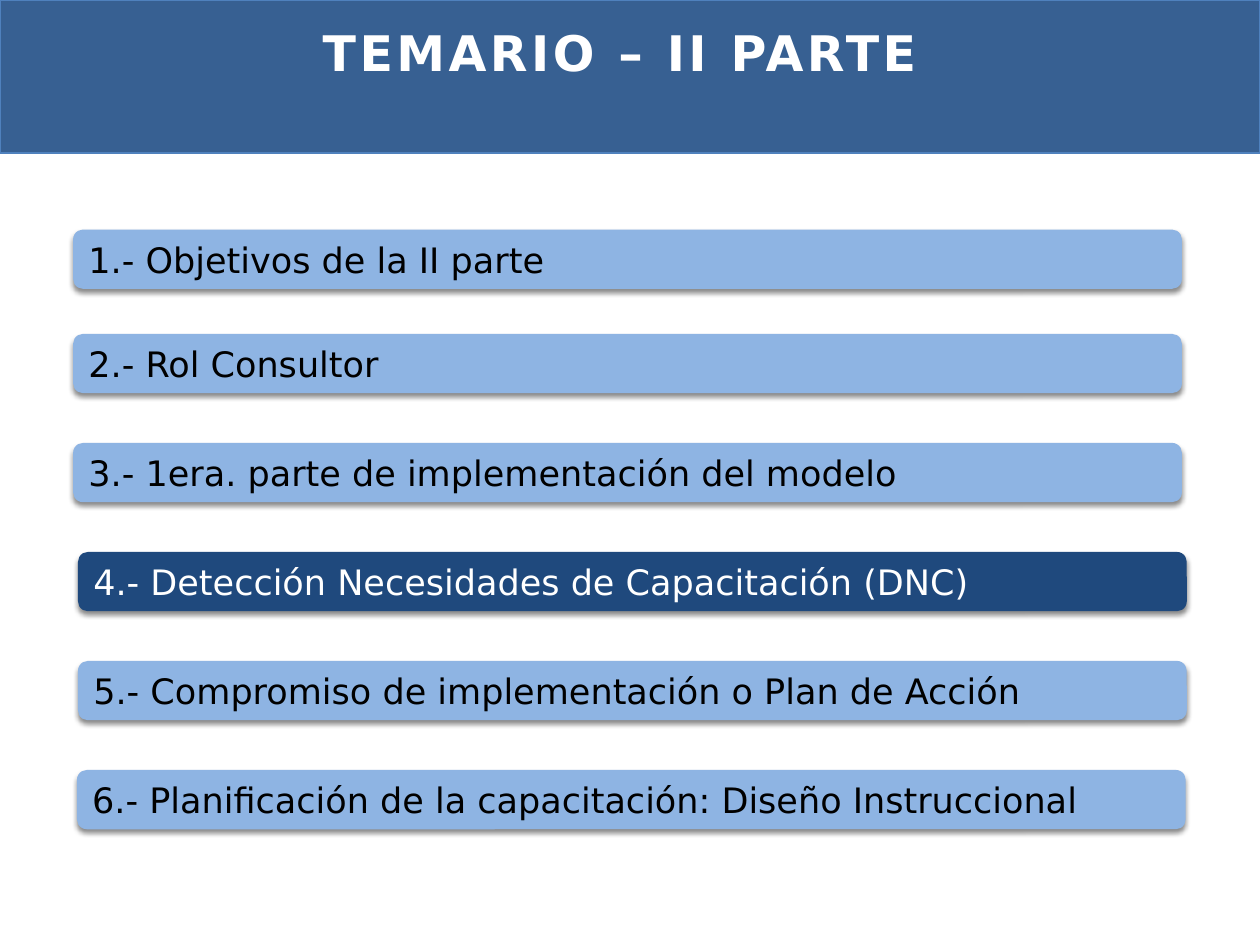
from lxml.etree import SubElement
from pptx import Presentation
from pptx.dml.color import RGBColor
from pptx.enum.shapes import MSO_SHAPE
from pptx.enum.text import MSO_ANCHOR, PP_ALIGN
from pptx.oxml.ns import qn
from pptx.util import Pt

# Content: text and left edge of each topic bar
TITLE = "TEMARIO – II PARTE"
TOPICS = [
    ("1.- Objetivos de la II parte", 41.8),
    ("2.- Rol Consultor", 41.8),
    ("3.- 1era. parte de implementación del modelo", 41.8),
    ("4.- Detección Necesidades de Capacitación (DNC)", 44.6),
    ("5.- Compromiso de implementación o Plan de Acción", 44.6),
    ("6.- Planificación de la capacitación: Diseño Instruccional", 44),
]
CURRENT = 3

FONT = "DejaVu Sans"
WHITE = RGBColor(0xFF, 0xFF, 0xFF)
BLACK = RGBColor(0x00, 0x00, 0x00)
BANNER_FILL = RGBColor(0x37, 0x60, 0x92)
BANNER_LINE = RGBColor(0x4F, 0x81, 0xBD)
LIGHT_BLUE = RGBColor(0x8E, 0xB4, 0xE3)
DARK_BLUE = RGBColor(0x1F, 0x49, 0x7D)

BAR_WIDTH, BAR_HEIGHT = 633.6, 33.9
FIRST_TOP, SECOND_TOP, PITCH = 131.2, 190.8, 62.3


def add_block(page, kind, left, top, width, height, fill):
    block = page.shapes.add_shape(kind, Pt(left), Pt(top), Pt(width), Pt(height))
    block.fill.solid()
    block.fill.fore_color.rgb = fill
    block.line.fill.background()
    block.shadow.inherit = False
    return block


def write(shape, text, size, color, align, anchor):
    frame = shape.text_frame
    frame.word_wrap = True
    frame.vertical_anchor = anchor
    para = frame.paragraphs[0]
    para.text = text
    para.alignment = align
    para.font.name = FONT
    para.font.size = Pt(size)
    para.font.color.rgb = color
    return para


def add_soft_shadow(shape):
    effects = shape.element.spPr.find(qn("a:effectLst"))
    shadow = SubElement(effects, qn("a:outerShdw"), blurRad=str(Pt(3)),
                        dist=str(Pt(2)), dir="5400000", rotWithShape="0")
    color = SubElement(shadow, qn("a:srgbClr"), val=str(BLACK))
    SubElement(color, qn("a:alpha"), val="45000")


deck = Presentation()
deck.slide_width, deck.slide_height = Pt(720), Pt(540)
page = deck.slides.add_slide(deck.slide_layouts[6])

# Banner and title
banner = add_block(page, MSO_SHAPE.RECTANGLE, 0, 0, 720, 87.4, BANNER_FILL)
banner.line.color.rgb = BANNER_LINE
banner.line.width = Pt(1.5)
title = page.shapes.add_textbox(Pt(36.7), Pt(9.4), Pt(635), Pt(90))
para = write(title, TITLE, 28, WHITE, PP_ALIGN.CENTER, MSO_ANCHOR.TOP)
para.font.bold = True
para.runs[0].font._element.set("spc", "200")

# Topic bars, the current one in dark blue
for index, (topic, left) in enumerate(TOPICS):
    top = SECOND_TOP + (index - 1) * PITCH if index else FIRST_TOP
    fill, color = (DARK_BLUE, WHITE) if index == CURRENT else (LIGHT_BLUE, BLACK)
    bar = add_block(page, MSO_SHAPE.ROUNDED_RECTANGLE, left, top,
                    BAR_WIDTH, BAR_HEIGHT, fill)
    add_soft_shadow(bar)
    write(bar, topic, 20, color, PP_ALIGN.LEFT, MSO_ANCHOR.MIDDLE)

deck.save("out.pptx")
